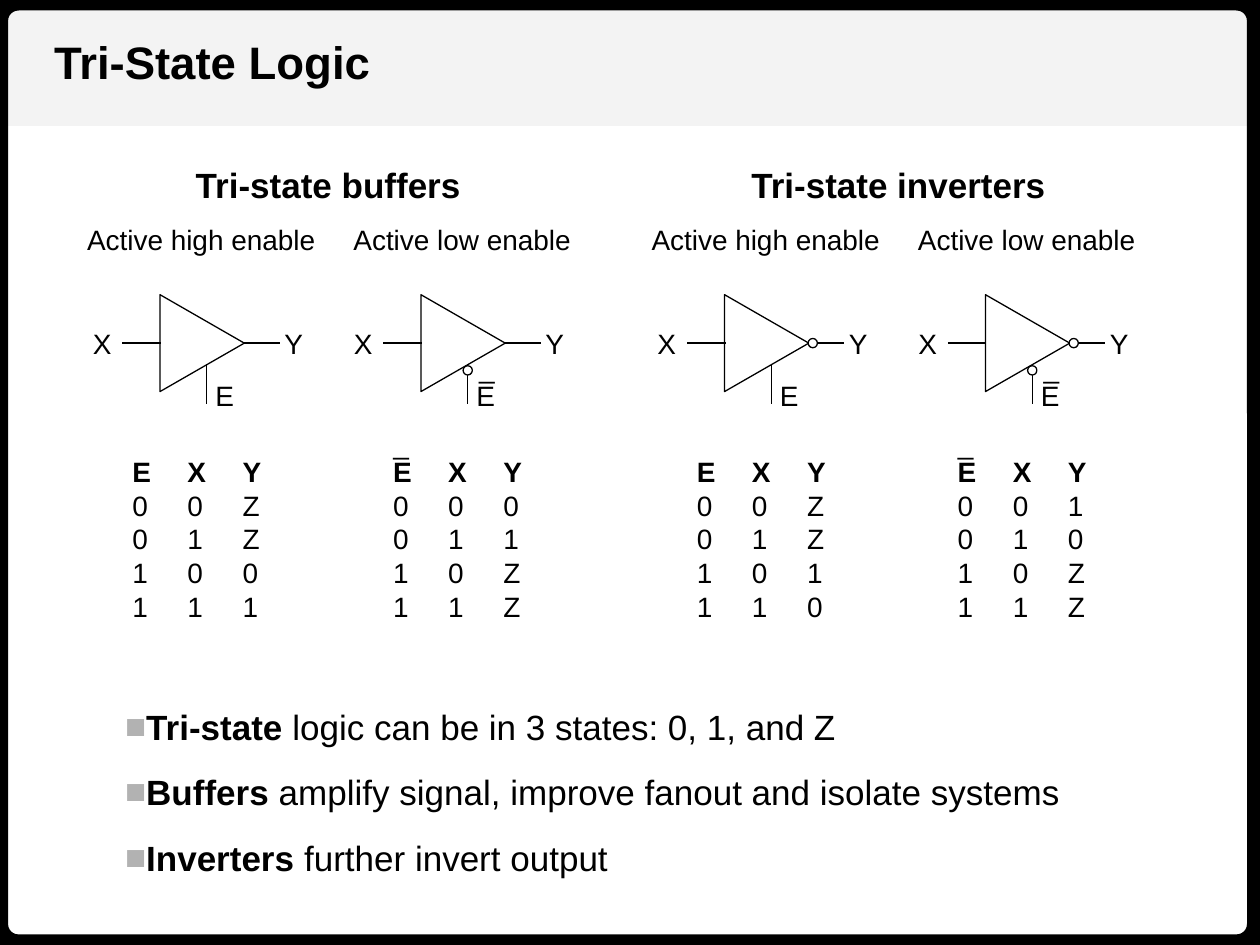
from dataclasses import dataclass
from itertools import product

from lxml import etree
from pptx import Presentation
from pptx import util as u
from pptx.dml.color import RGBColor
from pptx.enum import shapes, text
from pptx.oxml import ns


@dataclass(frozen=True)
class Theme:
    font: str = "Arial"
    ink: RGBColor = RGBColor(0, 0, 0)
    paper: RGBColor = RGBColor(255, 255, 255)
    band: RGBColor = RGBColor(0xF3, 0xF3, 0xF3)
    bullet: str = "B2B2B2"
    title: float = 26
    heading: float = 20
    label: float = 16
    thin: float = 0.75
    frame: float = 12


@dataclass(frozen=True)
class Box:
    left: float
    top: float
    width: float
    height: float

    def points(self):
        return [u.Pt(value) for value in (self.left, self.top, self.width, self.height)]


@dataclass(frozen=True)
class Gate:
    left: float
    outputs: str
    active_low: bool
    inverting: bool


@dataclass(frozen=True)
class Statement:
    term: str
    rest: str


THEME = Theme()
BUBBLE = 5.3
TAB_STEP = 31.5
GROUPS = ((46, False, ("ZZ01", "01ZZ")), (368.6, True, ("ZZ10", "10ZZ")))
GATE_STEP = 149.1
HEADINGS = (
    ("Tri-state buffers", Box(97.2, 90, 180.7, 31.7)),
    ("Tri-state inverters", Box(416.2, 90, 194.4, 31.7)),
)
STATEMENTS = (
    Statement("Tri-state", " logic can be in 3 states: 0, 1, and Z"),
    Statement("Buffers", " amplify signal, improve fanout and isolate systems"),
    Statement("Inverters", " further invert output"),
)


def add_element(parent, tag: str, **attributes):
    return etree.SubElement(parent, ns.qn(tag), attributes)


def style_font(paragraph, size: float, bold: bool = False) -> None:
    font = paragraph.font
    font.name = THEME.font
    font.size = u.Pt(size)
    font.bold = bold
    font.color.rgb = THEME.ink


def add_frame(slide, box: Box, wrap: bool = True):
    frame = slide.shapes.add_textbox(*box.points()).text_frame
    frame.word_wrap = wrap
    frame.auto_size = text.MSO_AUTO_SIZE.SHAPE_TO_FIT_TEXT
    return frame


def add_text(slide, box: Box, words: str, size: float, bold: bool = False,
             centred: bool = False) -> None:
    paragraph = add_frame(slide, box, wrap=centred).paragraphs[0]
    paragraph.text = words
    if centred:
        paragraph.alignment = text.PP_ALIGN.CENTER
    style_font(paragraph, size, bold)


def add_label(slide, left: float, top: float, words: str) -> None:
    add_text(slide, Box(left, top, 25.2, 26.6), words, THEME.label)


def add_outline(slide, kind, box: Box, weight: float = THEME.thin, fill=None):
    shape = slide.shapes.add_shape(kind, *box.points())
    shape.shadow.inherit = False
    shape.line.color.rgb = THEME.ink
    shape.line.width = u.Pt(weight)
    if fill is None:
        shape.fill.background()
    else:
        shape.fill.solid()
        shape.fill.fore_color.rgb = fill
    return shape


def add_wire(slide, x1: float, y1: float, x2: float, y2: float) -> None:
    wire = slide.shapes.add_connector(
        shapes.MSO_CONNECTOR.STRAIGHT, u.Pt(x1), u.Pt(y1), u.Pt(x2), u.Pt(y2))
    wire.line.color.rgb = THEME.ink
    wire.line.width = u.Pt(THEME.thin)
    add_element(wire.element.spPr, "a:effectLst")


def add_bubble(slide, left: float, top: float) -> None:
    add_outline(slide, shapes.MSO_SHAPE.OVAL, Box(left, top, BUBBLE, BUBBLE), fill=THEME.paper)


def add_truth_table(slide, gate: Gate) -> None:
    rows = ["EXY"] + [e + x + y for (e, x), y in zip(product("01", repeat=2), gate.outputs)]
    frame = add_frame(slide, Box(gate.left + 22.5, 256.3, 95.8, 104.4))
    for index, row in enumerate(rows):
        paragraph = frame.add_paragraph() if index else frame.paragraphs[0]
        paragraph.text = "\t".join(row)
        tabs = add_element(paragraph._p.get_or_add_pPr(), "a:tabLst")
        for stop in (1, 2):
            add_element(tabs, "a:tab", pos=str(u.Pt(stop * TAB_STEP)), algn="l")
        style_font(paragraph, THEME.label, bold=index == 0)


def add_gate(slide, gate: Gate) -> None:
    left = gate.left
    level = "low" if gate.active_low else "high"
    add_text(slide, Box(left - 21.4, 123.8, 180.7, 26.6), f"Active {level} enable",
             THEME.label, centred=True)
    triangle = add_outline(slide, shapes.MSO_SHAPE.ISOSCELES_TRIANGLE,
                           Box(left + 41.8, 172, 55.4, 48.2))
    triangle.rotation = 90
    add_wire(slide, left + 24, 196, left + 46, 196)
    add_wire(slide, left + 93.5, 196, left + 113.8, 196)
    add_wire(slide, left + 72.2, 208.2, left + 72.2, 231)
    add_label(slide, left, 183, "X")
    add_label(slide, left + 109.4, 183, "Y")
    add_label(slide, left + 70, 213, "E")
    add_truth_table(slide, gate)
    if gate.active_low:
        add_label(slide, left + 71.6, 196.6, "_")
        add_label(slide, left + 22.6, 240.2, "_")
        add_bubble(slide, left + 69.5, 209)
    if gate.inverting:
        add_bubble(slide, left + 93.2, 193.4)


def add_statements(slide) -> None:
    frame = add_frame(slide, Box(20.2, 387.4, 676, 116.6))
    for index, statement in enumerate(STATEMENTS):
        paragraph = frame.add_paragraph() if index else frame.paragraphs[0]
        paragraph.line_spacing = 1.5
        paragraph.space_before = u.Pt(1.5)
        properties = paragraph._p.get_or_add_pPr()
        properties.set("marL", str(u.Pt(44.2)))
        properties.set("indent", "0")
        add_element(add_element(properties, "a:buClr"), "a:srgbClr", val=THEME.bullet)
        add_element(properties, "a:buFont", typeface=THEME.font)
        add_element(properties, "a:buChar", char="■")
        style_font(paragraph, THEME.heading)
        for words, bold in ((statement.term, True), (statement.rest, False)):
            run = paragraph.add_run()
            run.text = words
            run.font.bold = bold


def main() -> None:
    presentation = Presentation()
    presentation.slide_width = u.Pt(720)
    presentation.slide_height = u.Pt(540)
    slide = presentation.slides.add_slide(presentation.slide_layouts[6])

    band = add_outline(slide, shapes.MSO_SHAPE.RECTANGLE, Box(0, 0, 720, 72), fill=THEME.band)
    band.line.fill.background()
    border = add_outline(slide, shapes.MSO_SHAPE.ROUNDED_RECTANGLE,
                         Box(-1.4, 0, 720, 540), THEME.frame)
    border.adjustments[0] = 0.022

    add_text(slide, Box(23.8, 15.8, 197.3, 38.9), "Tri-State Logic", THEME.title, bold=True)
    add_statements(slide)
    for words, box in HEADINGS:
        add_text(slide, box, words, THEME.heading, bold=True, centred=True)
    for left, inverting, tables in GROUPS:
        for index, outputs in enumerate(tables):
            add_gate(slide, Gate(left + index * GATE_STEP, outputs, index == 1, inverting))

    presentation.save("out.pptx")


if __name__ == "__main__":
    main()
